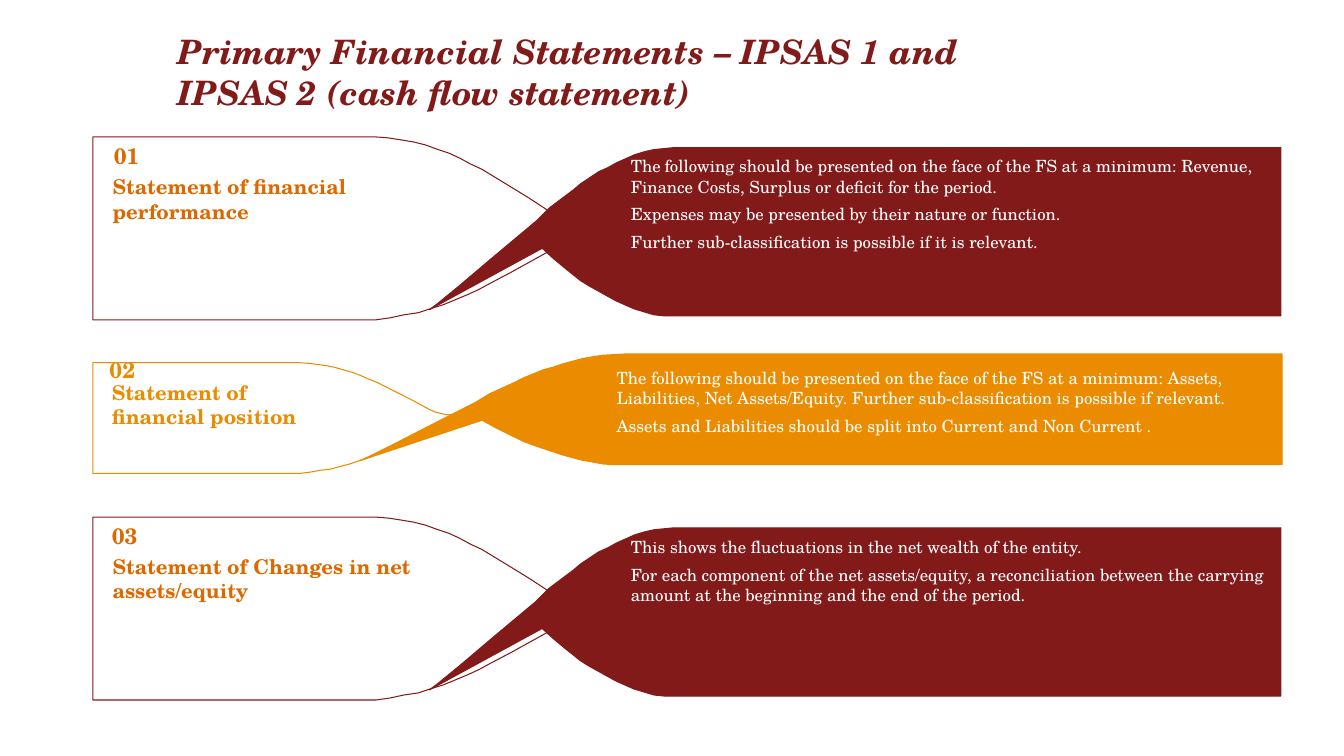
from dataclasses import dataclass

import pptx
import pptx.dml.color
import pptx.enum.text
import pptx.util
from pptx.util import Cm

FONT = "TeX Gyre Schola"
WHITE, MAROON, AMBER, ORANGE = "FFFFFF", "821A1A", "EB8C00", "DC6900"

TAB_OUTLINE = [
    (266, 0), (280, 0), (293, 1), (306, 3), (318, 5), (330, 8), (341, 12),
    (353, 16), (364, 21), (375, 27), (386, 32), (409, 46), (432, 60),
    (458, 77), (466, 81), (473, 83), (480, 85), (487, 85), (494, 85),
    (500, 84), (507, 82), (512, 80), (518, 77), (523, 75), (530, 70),
    (535, 66), (537, 65), (453, 113), (415, 134), (394, 145), (383, 151),
    (372, 156), (360, 161), (348, 166), (335, 170), (323, 174), (309, 176),
    (295, 179), (281, 181), (266, 181), (0, 181), (0, 0),
]
RIBBON_OUTLINE = [
    (243, 0), (233, 1), (223, 2), (214, 4), (204, 7), (195, 11), (186, 15),
    (177, 20), (168, 24), (159, 30), (150, 36), (143, 42), (135, 48),
    (119, 60), (106, 73), (63, 109), (30, 137), (8, 155), (0, 161),
    (112, 100), (123, 110), (135, 120), (150, 132), (158, 137), (167, 142),
    (176, 147), (185, 152), (194, 156), (203, 160), (213, 163), (223, 166),
    (233, 167), (243, 167), (845, 167), (845, 0),
]


@dataclass
class Area:
    left: float
    top: float
    width: float
    height: float


@dataclass
class Style:
    size: float
    color: str
    bold: bool = False
    italic: bool = False
    space_after: float = 0


@dataclass
class Statement:
    number: str
    heading: str
    details: list[tuple[str, ...]]
    color: str
    label_color: str
    tab: Area
    ribbon: Area
    details_area: Area
    heading_area: Area
    number_area: Area


STATEMENTS = [
    Statement(
        "01", "Statement of financial performance",
        [("The", " ", "following should be presented on the face of the FS at a minimum: "
          "Revenue, Finance Costs, Surplus or deficit for the period."),
         ("Expenses may be presented by their nature or function.",),
         ("Further sub-classification is possible if it is relevant.",)],
        MAROON, ORANGE,
        Area(2.34, 3.45, 13.64, 4.61), Area(10.82, 3.72, 21.46, 4.24),
        Area(15.65, 3.81, 16.64, 2.67), Area(2.59, 4.27, 8.18, 3.2),
        Area(2.62, 3.45, 4.52, 1.42),
    ),
    Statement(
        "02", "Statement of financial position",
        [("The following should be presented on the face of the FS at a minimum: "
          "Assets, Liabilities, Net Assets/Equity. Further sub-classification is "
          "possible if relevant.",),
         ("Assets and Liabilities should be split into Current and Non Current .",)],
        AMBER, AMBER,
        Area(2.34, 9.14, 9.96, 2.79), Area(9.07, 8.92, 23.24, 2.79),
        Area(15.29, 9.14, 16.69, 1.98), Area(2.57, 9.45, 5.69, 1.5),
        Area(2.51, 8.84, 6.02, 0.94),
    ),
    Statement(
        "03", "Statement of Changes in net assets/equity",
        [("This shows the fluctuations in the net wealth of the entity.",),
         ("For each component of the net assets/equity, a reconciliation between "
          "the carrying amount at the beginning and the end of the period.",)],
        MAROON, ORANGE,
        Area(2.34, 13.03, 13.64, 4.61), Area(10.82, 13.3, 21.46, 4.24),
        Area(15.65, 13.41, 16.64, 1.98), Area(2.59, 13.84, 8.18, 1.5),
        Area(2.57, 13.03, 4.52, 0.94),
    ),
]


def rgb(color: str) -> pptx.dml.color.RGBColor:
    return pptx.dml.color.RGBColor.from_string(color)


def draw_outline(page, points: list[tuple[int, int]], area: Area, fill: str, line: str) -> None:
    scale = (
        Cm(area.width) / max(x for x, y in points),
        Cm(area.height) / max(y for x, y in points),
    )
    builder = page.shapes.build_freeform(*points[0], scale=scale)
    builder.add_line_segments(points[1:], close=True)
    shape = builder.convert_to_shape(Cm(area.left), Cm(area.top))
    shape.shadow.inherit = False
    shape.fill.solid()
    shape.fill.fore_color.rgb = rgb(fill)
    shape.line.color.rgb = rgb(line)
    shape.line.width = pptx.util.Pt(0.75)


def format_paragraph(para, style: Style) -> None:
    para.alignment = pptx.enum.text.PP_ALIGN.LEFT
    para.space_after = pptx.util.Pt(style.space_after)
    para.font.name = FONT
    para.font.size = pptx.util.Pt(style.size)
    para.font.bold = style.bold
    para.font.italic = style.italic
    para.font.color.rgb = rgb(style.color)


def draw_text(page, area: Area, paragraphs: list[tuple[str, ...]], style: Style) -> None:
    box = page.shapes.add_textbox(Cm(area.left), Cm(area.top), Cm(area.width), Cm(area.height))
    frame = box.text_frame
    frame.word_wrap = True
    frame.auto_size = pptx.enum.text.MSO_AUTO_SIZE.SHAPE_TO_FIT_TEXT
    for index, spans in enumerate(paragraphs):
        para = frame.add_paragraph() if index else frame.paragraphs[0]
        format_paragraph(para, style)
        for text in spans:
            span = para.add_run()
            span.text = text
            if text.isspace():
                span.font.size = pptx.util.Pt(10)


def draw_title(page, text: str) -> None:
    title = page.shapes.title
    title.left, title.top, title.width, title.height = Cm(4.47), Cm(0.84), Cm(20.96), Cm(1.98)
    frame = title.text_frame
    frame.margin_left = frame.margin_top = frame.margin_right = frame.margin_bottom = 0
    frame.word_wrap = True
    frame.auto_size = pptx.enum.text.MSO_AUTO_SIZE.NONE
    frame.vertical_anchor = pptx.enum.text.MSO_ANCHOR.BOTTOM
    frame.text = text
    format_paragraph(frame.paragraphs[0], Style(24, MAROON, bold=True, italic=True))


def draw_statement(page, statement: Statement) -> None:
    draw_outline(page, TAB_OUTLINE, statement.tab, WHITE, statement.color)
    draw_outline(page, RIBBON_OUTLINE, statement.ribbon, statement.color, statement.color)
    draw_text(page, statement.details_area, statement.details, Style(12, WHITE, space_after=5.4))
    draw_text(page, statement.heading_area, [(statement.heading,)],
              Style(14.5, statement.label_color, bold=True))
    draw_text(page, statement.number_area, [(statement.number,)],
              Style(16, statement.label_color, bold=True))


def main() -> None:
    deck = pptx.Presentation()
    deck.slide_width, deck.slide_height = Cm(33.87), Cm(19.05)
    page = deck.slides.add_slide(deck.slide_layouts[5])
    draw_title(page, "Primary Financial Statements – IPSAS 1 and IPSAS 2 (cash flow statement)")
    for statement in STATEMENTS:
        draw_statement(page, statement)
    deck.save("out.pptx")


if __name__ == "__main__":
    main()
